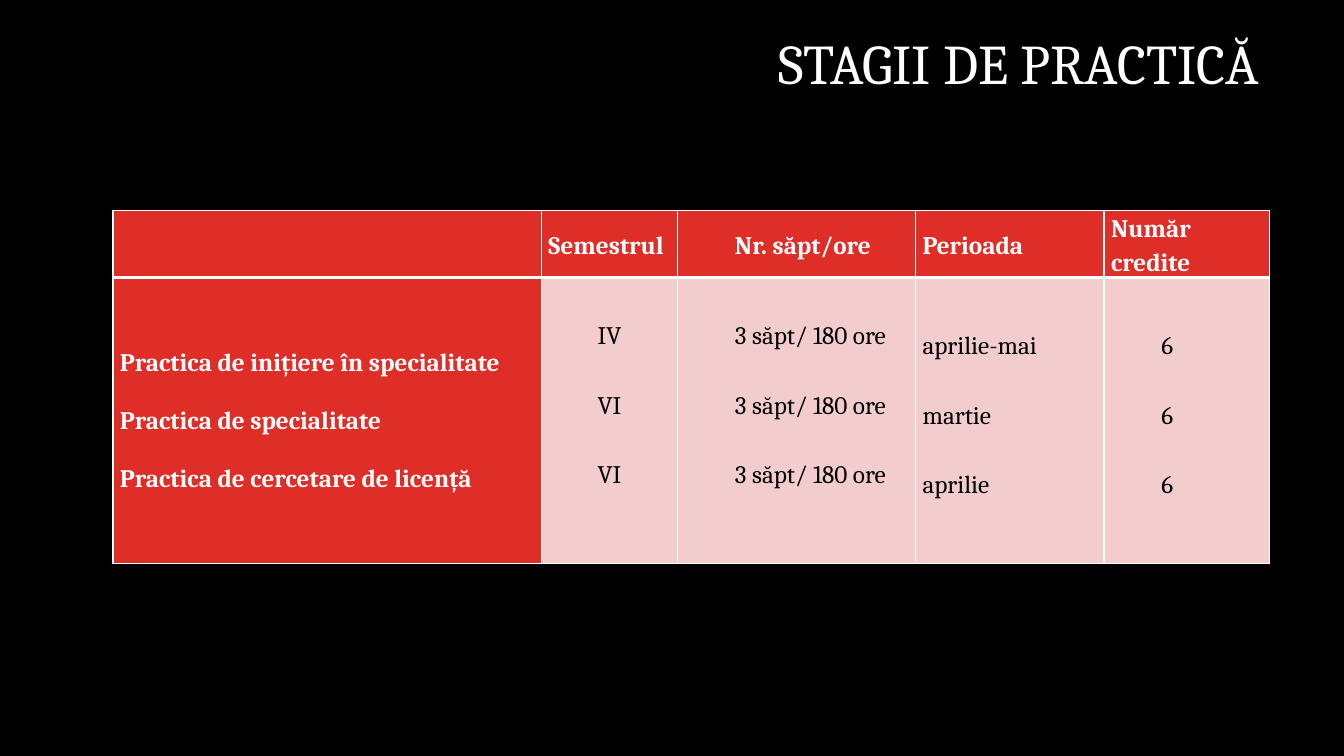
from dataclasses import dataclass

from lxml import etree
from pptx import Presentation
from pptx import util as u
from pptx.dml.color import RGBColor
from pptx.enum import text
from pptx.oxml import ns

BLACK = RGBColor(0x00, 0x00, 0x00)
WHITE = RGBColor(0xFF, 0xFF, 0xFF)
RED = RGBColor(0xDF, 0x2E, 0x28)
PINK = RGBColor(0xF3, 0xCD, 0xCD)
FONT = "Cambria"
ALIGN = text.PP_ALIGN


@dataclass
class Entry:
    lines: tuple[str, ...] = ()
    align: ALIGN = ALIGN.JUSTIFY
    indent: float = 0
    after: float = 8
    foot: float = 0


@dataclass
class Row:
    height: float
    space: float
    fills: list[RGBColor]
    inks: list[RGBColor]
    bolds: list[bool]
    edges: dict[str, float]
    cells: list[Entry]


WIDTHS = [4.25, 1.35, 2.36, 1.87, 1.64]
ROWS = [
    Row(0.66, 1.15, [RED] * 5, [WHITE] * 5, [True] * 5,
        {"L": 1, "R": 1, "T": 1, "B": 3},
        [Entry(),
         Entry(("Semestrul",)),
         Entry(("Nr. săpt/ore",), indent=0.5),
         Entry(("Perioada",)),
         Entry(("Număr credite",))]),
    Row(2.84, 2.0, [RED] + [PINK] * 4, [WHITE] + [BLACK] * 4,
        [True] + [False] * 4,
        {"L": 1, "R": 1, "T": 3, "B": 1},
        [Entry(("Practica de inițiere în specialitate Practica de specialitate",
                "Practica de cercetare de licență"),
               ALIGN.LEFT, after=0, foot=0.28),
         Entry(("IV", "VI", "VI"), ALIGN.CENTER, foot=0.58),
         Entry(("3 săpt/ 180 ore",) * 3, indent=0.5, foot=0.58),
         Entry(("aprilie-mai", "martie", "aprilie"), foot=0.38),
         Entry(("6",) * 3, indent=0.5, foot=0.38)]),
]


def set_font(para, size: float, ink: RGBColor, bold: bool) -> None:
    font = para.font
    font.name = FONT
    font.size = u.Pt(size)
    font.bold = bold
    font.color.rgb = ink


def draw_edge(cell, side: str, width: float) -> None:
    props = cell._tc.get_or_add_tcPr()
    line = etree.SubElement(props, ns.qn(f"a:ln{side}"), w=str(u.Pt(width)))
    fill = etree.SubElement(line, ns.qn("a:solidFill"))
    etree.SubElement(fill, ns.qn("a:srgbClr"), val=str(WHITE))


def fill_cell(cell, entry: Entry, row: Row, col: int) -> None:
    for side, width in row.edges.items():
        draw_edge(cell, side, width)
    cell.fill.solid()
    cell.fill.fore_color.rgb = row.fills[col]
    cell.vertical_anchor = text.MSO_ANCHOR.MIDDLE
    cell.margin_left = cell.margin_right = u.Inches(0.07)
    cell.margin_top = 0
    cell.margin_bottom = u.Inches(entry.foot)
    frame = cell.text_frame
    frame.text = "\n".join(entry.lines)
    for para in frame.paragraphs:
        para.alignment = entry.align
        para.line_spacing = row.space
        para.space_after = u.Pt(entry.after)
        if entry.indent:
            para._p.get_or_add_pPr().set("indent", str(u.Inches(entry.indent)))
        set_font(para, 18, row.inks[col], row.bolds[col])


def add_title(slide) -> None:
    title = slide.shapes.title
    title.left, title.top = u.Inches(3.17), u.Inches(0.3)
    title.width, title.height = u.Inches(9.42), u.Inches(1.32)
    frame = title.text_frame
    frame.text = "STAGII DE PRACTICĂ"
    frame.word_wrap = True
    frame.auto_size = text.MSO_AUTO_SIZE.NONE
    frame.vertical_anchor = text.MSO_ANCHOR.MIDDLE
    frame.margin_bottom = u.Inches(0.65)
    para = frame.paragraphs[0]
    para.alignment = ALIGN.RIGHT
    para.line_spacing = 0.9
    set_font(para, 40, WHITE, False)


def add_grid(slide) -> None:
    height = sum(row.height for row in ROWS)
    grid = slide.shapes.add_table(
        len(ROWS), len(WIDTHS), u.Inches(1.12), u.Inches(2.09),
        u.Inches(sum(WIDTHS)), u.Inches(height)).table
    for col, width in zip(grid.columns, WIDTHS):
        col.width = u.Inches(width)
    for r, row in enumerate(ROWS):
        grid.rows[r].height = u.Inches(row.height)
        for c, entry in enumerate(row.cells):
            fill_cell(grid.cell(r, c), entry, row, c)


def main() -> None:
    deck = Presentation()
    deck.slide_width, deck.slide_height = u.Inches(13.33), u.Inches(7.5)
    slide = deck.slides.add_slide(deck.slide_layouts[5])
    back = slide.background.fill
    back.solid()
    back.fore_color.rgb = BLACK
    add_title(slide)
    add_grid(slide)
    deck.save("out.pptx")


if __name__ == "__main__":
    main()
